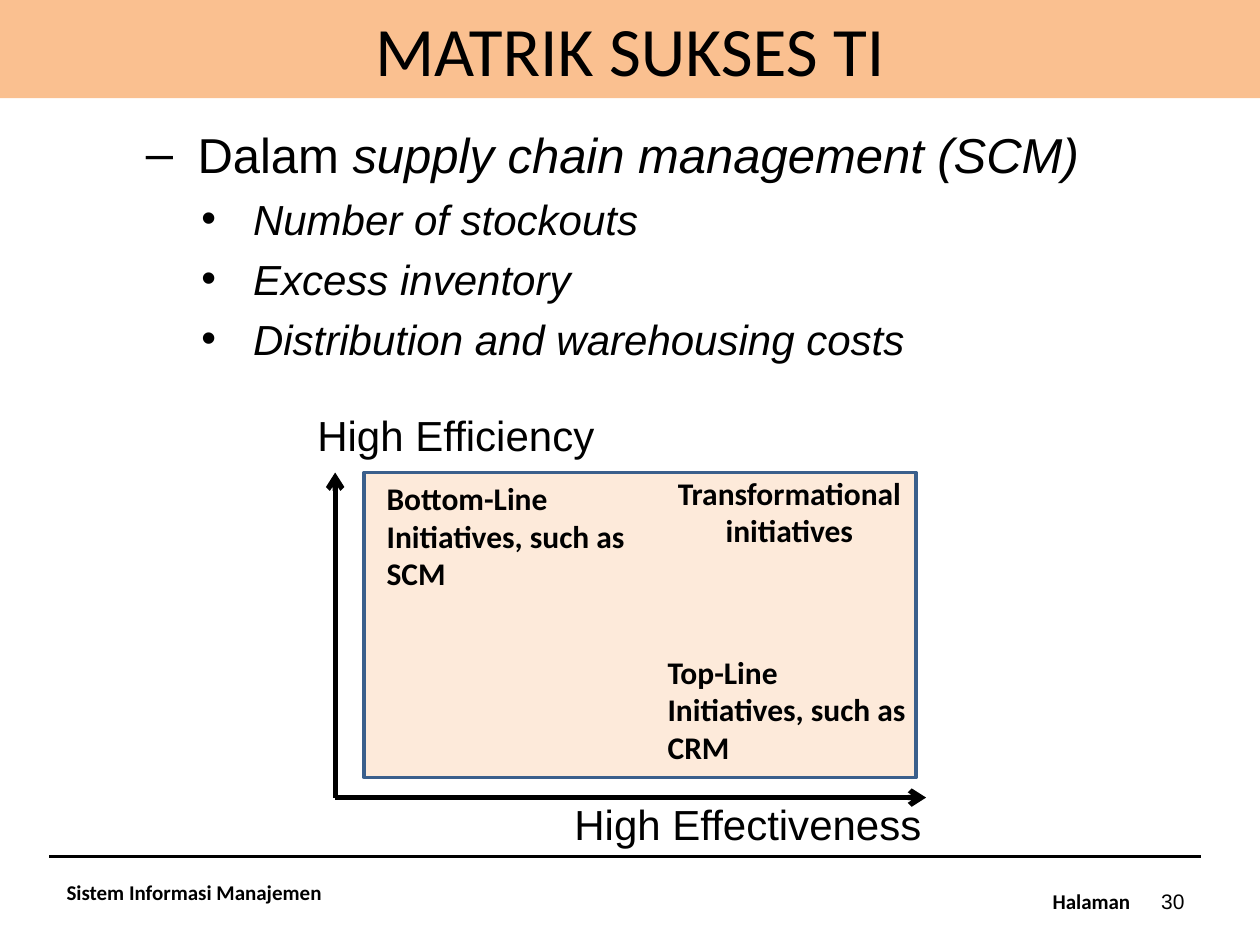
import pptx
import pptx.dml.color
import pptx.enum.shapes
import pptx.enum.text
import pptx.oxml
import pptx.oxml.ns
import pptx.util
from pptx.util import Inches

BLACK = pptx.dml.color.RGBColor(0x00, 0x00, 0x00)
ORANGE = pptx.dml.color.RGBColor(0xFA, 0xC0, 0x90)
PEACH = pptx.dml.color.RGBColor(0xFD, 0xEA, 0xDA)
BLUE = pptx.dml.color.RGBColor(0x3A, 0x5F, 0x8C)
LEFT = pptx.enum.text.PP_ALIGN.LEFT
CENTER = pptx.enum.text.PP_ALIGN.CENTER
RIGHT = pptx.enum.text.PP_ALIGN.RIGHT
TOP = pptx.enum.text.MSO_ANCHOR.TOP
MIDDLE = pptx.enum.text.MSO_ANCHOR.MIDDLE


def add_run(p, text, size, font, bold=False, italic=False):
    """Append a black run to a paragraph."""
    r = p.add_run()
    r.text = text
    r.font.size = pptx.util.Pt(size)
    r.font.name = font
    r.font.bold = bold
    r.font.italic = italic
    r.font.color.rgb = BLACK


def add_lines(tf, lines, size, font, bold=False, align=LEFT):
    """Fill a text frame with one paragraph per line."""
    for i, line in enumerate(lines):
        p = tf.paragraphs[0] if i == 0 else tf.add_paragraph()
        p.alignment = align
        add_run(p, line, size, font, bold)


def add_label(s, box, lines, size, font, bold=False, align=LEFT, anchor=TOP, wrap=False):
    """Add a text box of uniformly styled lines."""
    tf = s.shapes.add_textbox(*map(Inches, box)).text_frame
    tf.word_wrap = wrap
    tf.vertical_anchor = anchor
    add_lines(tf, lines, size, font, bold, align)


def add_rect(s, box, fill, line=None):
    """Add a flat rectangle, outlined if a line colour is given."""
    rect = pptx.enum.shapes.MSO_SHAPE.RECTANGLE
    sp = s.shapes.add_shape(rect, *map(Inches, box))
    sp.shadow.inherit = False
    sp.fill.solid()
    sp.fill.fore_color.rgb = fill
    if line is None:
        sp.line.fill.background()
    else:
        sp.line.color.rgb = line
        sp.line.width = pptx.util.Pt(2)
    return sp


def add_line(s, start, end, width, arrow=False):
    """Add a straight black line, with an optional arrowhead at its end."""
    straight = pptx.enum.shapes.MSO_CONNECTOR.STRAIGHT
    cxn = s.shapes.add_connector(straight, *map(Inches, start + end))
    cxn.line.color.rgb = BLACK
    cxn.line.width = pptx.util.Pt(width)
    if arrow:
        tail = pptx.oxml.ns.qn("a:tailEnd")
        cxn.line._get_or_add_ln().append(
            pptx.oxml.xmlchemy.OxmlElement("a:tailEnd"))
        cxn.line._get_or_add_ln().find(tail).set("type", "arrow")
    sp_pr = cxn._element.spPr
    sp_pr.append(pptx.oxml.xmlchemy.OxmlElement("a:effectLst"))


def add_bullet(p, level, char, margin, size, runs):
    """Format a paragraph as a bullet with a hanging indent and add its runs."""
    p.level = level
    p.space_before = pptx.util.Pt(0.23 * size)
    p_pr = p._p.get_or_add_pPr()
    p_pr.set("marL", str(Inches(margin)))
    p_pr.set("indent", str(Inches(-0.41)))
    bu_font = pptx.oxml.xmlchemy.OxmlElement("a:buFont")
    bu_font.set("typeface", "Arial")
    bu = pptx.oxml.xmlchemy.OxmlElement("a:buChar")
    bu.set("char", char)
    p_pr.extend([bu_font, bu])
    for text, italic in runs:
        add_run(p, text, size, "Arial", italic=italic)


def add_body(s):
    """Add the supply chain bullet list."""
    box = s.shapes.add_textbox(Inches(0.47), Inches(0.94), Inches(9), Inches(2.03))
    tf = box.text_frame
    tf.word_wrap = True
    add_bullet(tf.paragraphs[0], 1, "–", 1, 28,
               [("Dalam", False), (" supply chain management (SCM)", True)])
    for item in ("Number of stockouts", "Excess inventory",
                 "Distribution and warehousing costs"):
        add_bullet(tf.add_paragraph(), 2, "•", 1.44, 24, [(item, True)])


def add_matrix(s):
    """Add the efficiency and effectiveness matrix with its axes."""
    add_rect(s, (2.89, 3.75, 4.38, 2.42), PEACH, BLUE)
    origin = (2.66, 6.33)
    add_line(s, origin, (7.35, 6.33), 3, arrow=True)
    add_line(s, origin, (2.66, 3.75), 3, arrow=True)
    add_label(s, (4.46, 6.29, 2.98, 0.5), ["High Effectiveness"], 24, "Arial")
    add_label(s, (2.42, 3.2, 2.42, 0.5), ["High Efficiency"], 24, "Arial")
    for box, lines, align in (
        ((5.27, 3.71, 1.99, 0.71), ["Transformational", "initiatives"], CENTER),
        ((2.97, 3.75, 2.11, 1.01), ["Bottom-Line", "Initiatives, such as", "SCM"], LEFT),
        ((5.2, 5.13, 2.11, 1.01), ["Top-Line", "Initiatives, such as", "CRM"], LEFT),
    ):
        add_label(s, box, lines, 18, "Calibri", True, align)


def add_footer(s):
    """Add the footer rule, course name and page number."""
    add_line(s, (0.39, 6.8), (9.53, 6.8), 1.5)
    for box, text, font, bold, align in (
        ((0.43, 6.88, 2.54, 0.4), "Sistem Informasi Manajemen", "Calibri", True, LEFT),
        ((8.13, 6.95, 0.94, 0.4), "Halaman", "Calibri", True, RIGHT),
        ((9.06, 6.95, 0.44, 0.4), "30", "Arial", False, RIGHT),
    ):
        add_label(s, box, [text], 12, font, bold, align, MIDDLE, wrap=True)


def main():
    """Build the slide and save it."""
    prs = pptx.Presentation()
    prs.slide_width = Inches(10)
    prs.slide_height = Inches(7.5)
    s = prs.slides.add_slide(prs.slide_layouts[6])
    title = add_rect(s, (0, 0, 10, 0.78), ORANGE)
    title.text_frame.vertical_anchor = MIDDLE
    add_lines(title.text_frame, ["MATRIK SUKSES TI"], 39.6, "Calibri", align=CENTER)
    add_body(s)
    add_matrix(s)
    add_footer(s)
    prs.save("out.pptx")


if __name__ == "__main__":
    main()
